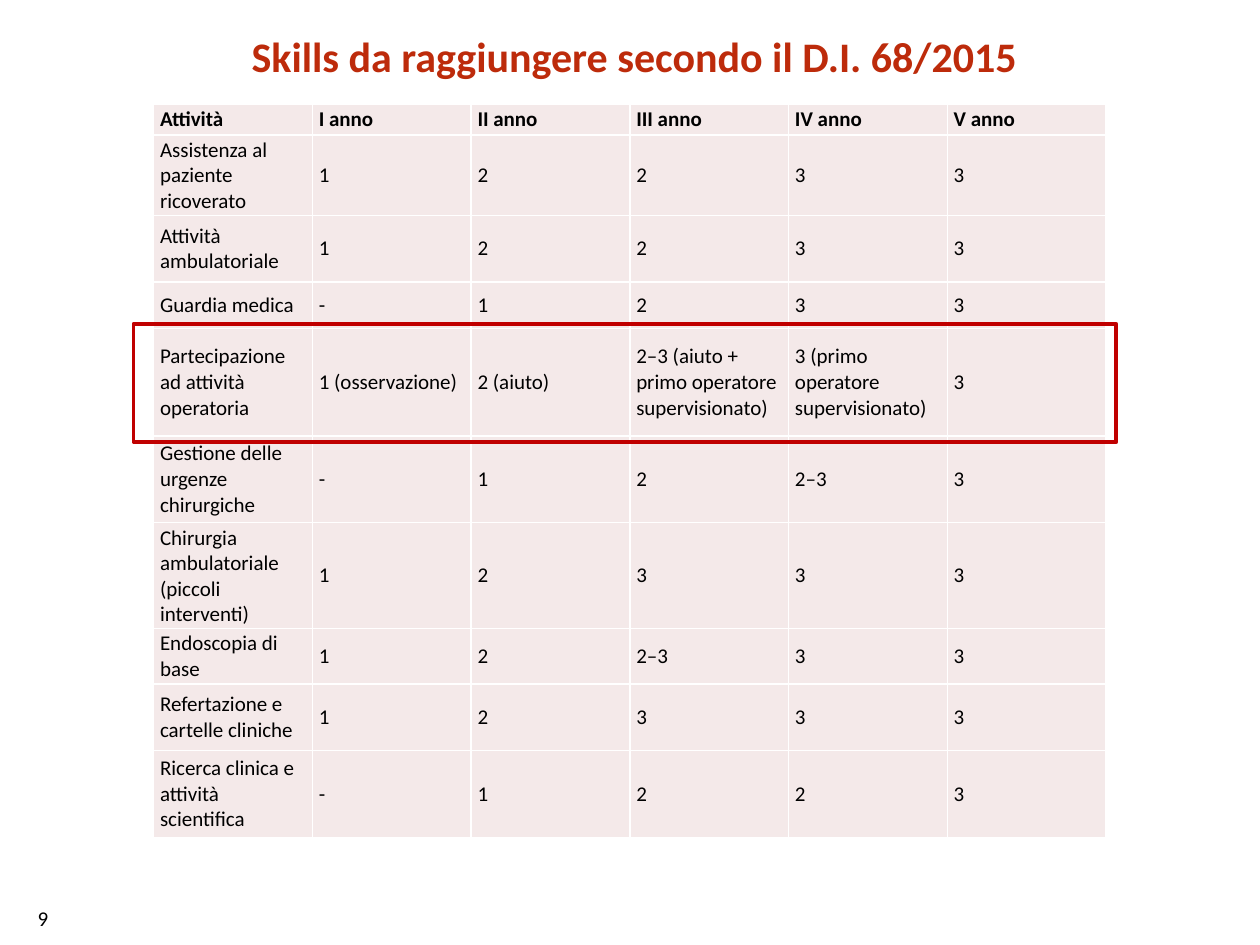
from dataclasses import dataclass

import pptx
import pptx.dml.color
import pptx.enum.shapes
import pptx.enum.text
import pptx.oxml
import pptx.oxml.ns
import pptx.util
from pptx.util import Inches


def rgb(value):
    return pptx.dml.color.RGBColor.from_string(value)


@dataclass(frozen=True)
class Theme:
    font: str = "Calibri"
    title_size: int = 24
    body_size: int = 12
    title: str = "BD2B0B"
    text: str = "000000"
    cell: str = "F4E9E9"
    grid: str = "FFFFFF"
    highlight: str = "C00000"


THEME = Theme()

SKILLS = [
    ["Attività", "I anno", "II anno", "III anno", "IV anno", "V anno"],
    ["Assistenza al paziente ricoverato", "1", "2", "2", "3", "3"],
    ["Attività ambulatoriale", "1", "2", "2", "3", "3"],
    ["Guardia medica", "-", "1", "2", "3", "3"],
    ["Partecipazione ad attività operatoria", "1 (osservazione)", "2 (aiuto)",
     "2–3 (aiuto + primo operatore supervisionato)",
     "3 (primo operatore supervisionato)", "3"],
    ["Gestione delle urgenze chirurgiche", "-", "1", "2", "2–3", "3"],
    ["Chirurgia ambulatoriale (piccoli interventi)", "1", "2", "3", "3", "3"],
    ["Endoscopia di base", "1", "2", "2–3", "3", "3"],
    ["Refertazione e cartelle cliniche", "1", "2", "3", "3", "3"],
    ["Ricerca clinica e attività scientifica", "-", "1", "2", "2", "3"],
]
ROW_HEIGHTS = [0.21, 0.53, 0.53, 0.37, 0.85, 0.69, 0.69, 0.37, 0.53, 0.69]
COLUMN_WIDTH = 1.26


def add_run(paragraph, text, size=THEME.body_size, color=THEME.text, bold=False):
    run = paragraph.add_run()
    run.text = text
    run.font.name = THEME.font
    run.font.size = pptx.util.Pt(size)
    run.font.bold = bold
    run.font.color.rgb = rgb(color)


def set_title(slide, text):
    title = slide.shapes.title
    title.left, title.top = Inches(0.43), Inches(0.29)
    title.width, title.height = Inches(9.21), Inches(0.47)
    frame = title.text_frame
    frame.word_wrap = True
    frame.auto_size = pptx.enum.text.MSO_AUTO_SIZE.NONE
    frame.vertical_anchor = pptx.enum.text.MSO_ANCHOR.TOP
    paragraph = frame.paragraphs[0]
    paragraph.alignment = pptx.enum.text.PP_ALIGN.CENTER
    paragraph.line_spacing = pptx.util.Pt(22)
    paragraph.space_before = pptx.util.Pt(0)
    add_run(paragraph, text, THEME.title_size, THEME.title, bold=True)


def add_page_number(slide, number):
    box = slide.shapes.add_textbox(Inches(0.2), Inches(7.14), Inches(0.87), Inches(0.3))
    box.text_frame.word_wrap = True
    add_run(box.text_frame.paragraphs[0], number)


def set_cell_borders(cell):
    """Draw the grid line on all four sides; call before setting the fill."""
    properties = cell._tc.get_or_add_tcPr()
    for side in ("lnL", "lnR", "lnT", "lnB"):
        properties.append(pptx.oxml.parse_xml(
            f'<a:{side} {pptx.oxml.ns.nsdecls("a")} w="{pptx.util.Pt(1)}">'
            f'<a:solidFill><a:srgbClr val="{THEME.grid}"/></a:solidFill></a:{side}>'))


def fill_cell(cell, text, bold):
    set_cell_borders(cell)
    cell.fill.solid()
    cell.fill.fore_color.rgb = rgb(THEME.cell)
    cell.margin_left = cell.margin_right = Inches(0.05)
    cell.margin_top = cell.margin_bottom = Inches(0.02)
    cell.vertical_anchor = pptx.enum.text.MSO_ANCHOR.MIDDLE
    add_run(cell.text_frame.paragraphs[0], text, bold=bold)


def add_skills_table(slide):
    column_count = len(SKILLS[0])
    table = slide.shapes.add_table(
        len(SKILLS), column_count, Inches(1.22), Inches(0.83),
        Inches(COLUMN_WIDTH * column_count), Inches(sum(ROW_HEIGHTS))).table
    for column in table.columns:
        column.width = Inches(COLUMN_WIDTH)
    for index, (activity, height) in enumerate(zip(SKILLS, ROW_HEIGHTS)):
        table.rows[index].height = Inches(height)
        for cell, text in zip(table.rows[index].cells, activity):
            fill_cell(cell, text, bold=index == 0)


def add_highlight(slide):
    outline = slide.shapes.add_shape(
        pptx.enum.shapes.MSO_SHAPE.RECTANGLE,
        Inches(1.06), Inches(2.57), Inches(7.8), Inches(0.94))
    outline.shadow.inherit = False
    outline.fill.background()
    outline.line.color.rgb = rgb(THEME.highlight)
    outline.line.width = pptx.util.Pt(2)


def main():
    presentation = pptx.Presentation()
    presentation.slide_width, presentation.slide_height = Inches(10), Inches(7.5)
    slide = presentation.slides.add_slide(presentation.slide_layouts[5])
    add_page_number(slide, "9")
    set_title(slide, "Skills da raggiungere secondo il D.I. 68/2015")
    add_skills_table(slide)
    add_highlight(slide)
    presentation.save("out.pptx")


if __name__ == "__main__":
    main()
